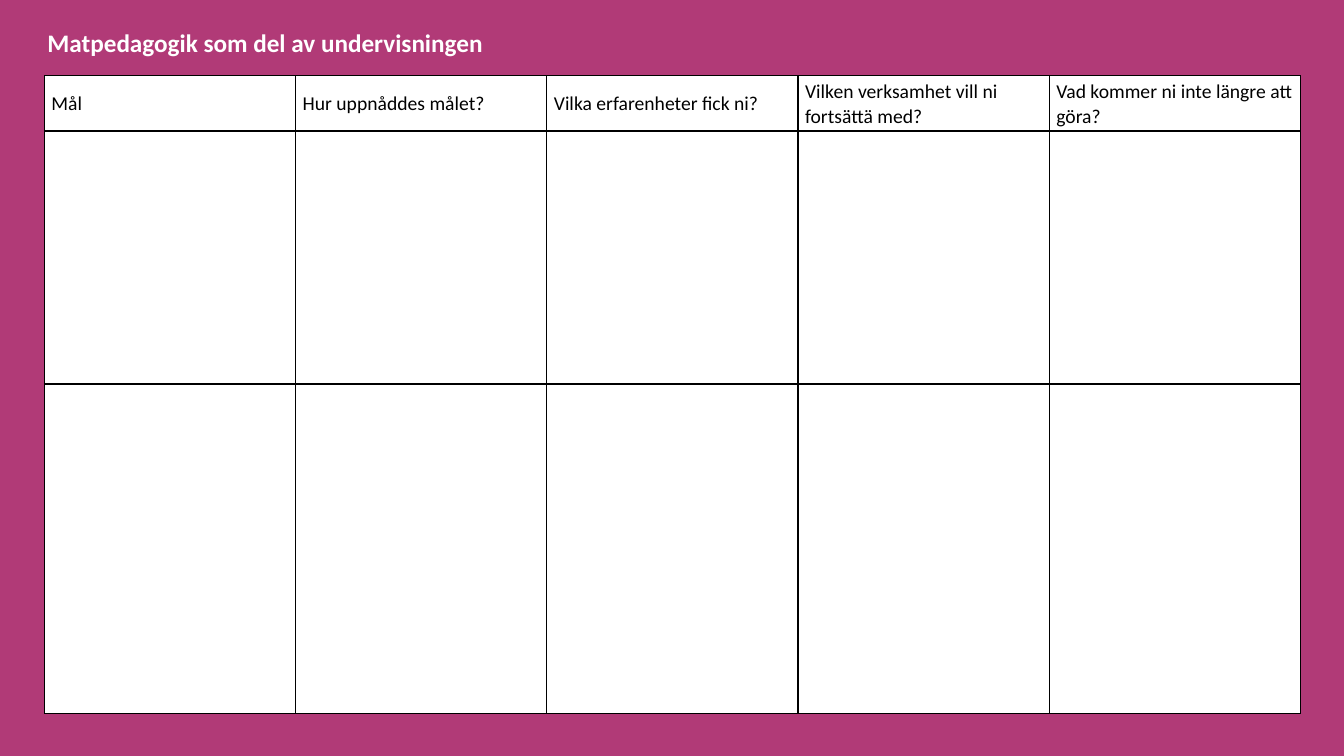
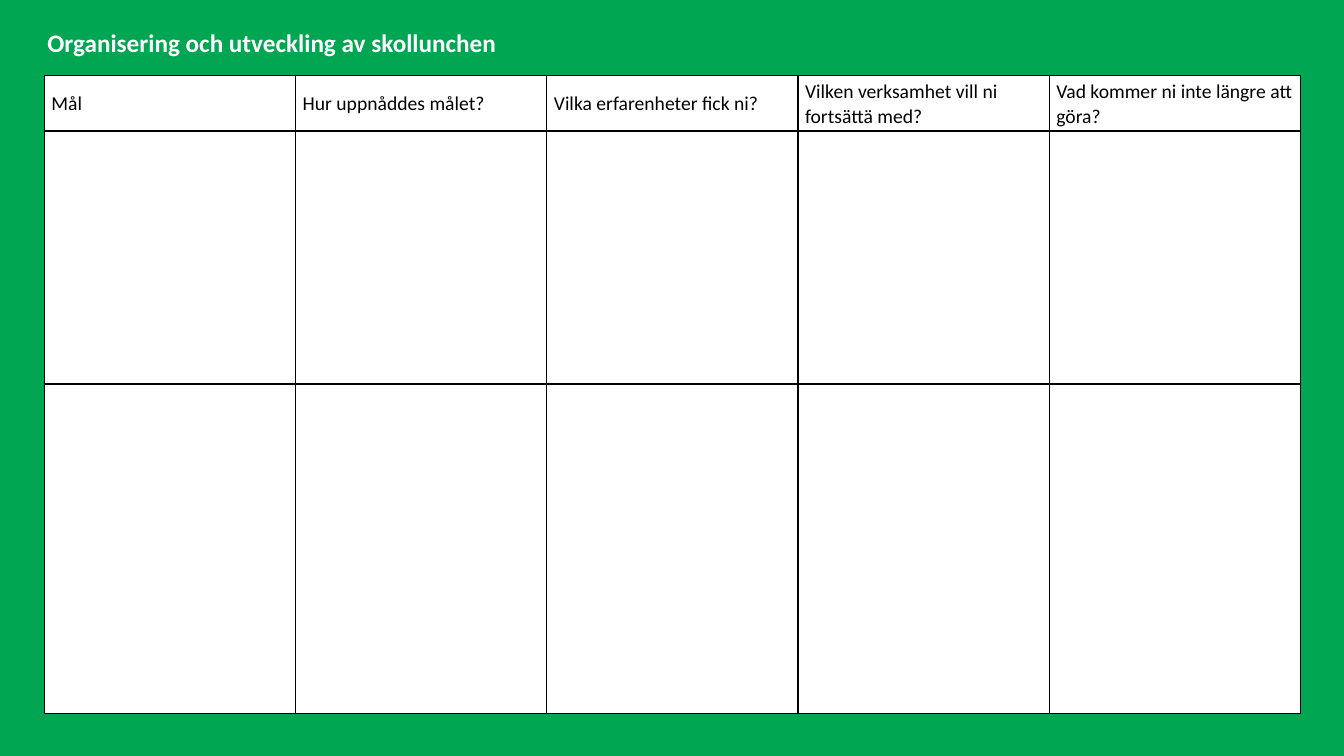
from dataclasses import dataclass

from lxml import etree
from pptx import Presentation
from pptx.dml.color import RGBColor
from pptx.enum.text import MSO_ANCHOR, MSO_AUTO_SIZE, PP_ALIGN
from pptx.oxml.ns import qn
from pptx.util import Inches, Pt

MIDDLE = MSO_ANCHOR.MIDDLE
LEFT = PP_ALIGN.LEFT
NO_FIT = MSO_AUTO_SIZE.NONE
TITLE_ONLY = 5

SLIDES = [
    ("Matpedagogik som del av undervisningen", "B13A77"),
    ("Organisering och utveckling av skollunchen", "00A651"),
]
HEADERS = [
    "Mål",
    "Hur uppnåddes målet?",
    "Vilka erfarenheter fick ni?",
    "Vilken verksamhet vill ni fortsättä med?",
    "Vad kommer ni inte längre att göra?",
]
ROW_HEIGHTS = [0.55, 2.51, 3.27]
TABLE_LEFT, TABLE_TOP, TABLE_WIDTH = 0.44, 0.75, 12.46
TITLE_BOX = (0.37, 0.22, 5.21, 0.4)


@dataclass(frozen=True)
class Theme:
    font: str = "Calibri"
    white: str = "FFFFFF"
    black: str = "000000"
    title_size: int = 18
    cell_size: int = 14
    border: int = 1


THEME = Theme()


def add_run(p, text, size, color, bold=False):
    r = p.add_run()
    r.text = text
    r.font.name = THEME.font
    r.font.size = Pt(size)
    r.font.bold = bold
    r.font.color.rgb = RGBColor.from_string(color)


def set_borders(cell):
    tc_pr = cell._tc.get_or_add_tcPr()
    for side in ("lnL", "lnR", "lnT", "lnB"):
        ln = etree.SubElement(tc_pr, qn(f"a:{side}"), w=str(Pt(THEME.border)))
        fill = etree.SubElement(ln, qn("a:solidFill"))
        etree.SubElement(fill, qn("a:srgbClr"), val=THEME.black)


def add_title(s, text):
    sp = s.shapes.title
    sp.left, sp.top, sp.width, sp.height = map(Inches, TITLE_BOX)
    tf = sp.text_frame
    tf.auto_size = NO_FIT
    tf.word_wrap = True
    tf.vertical_anchor = MIDDLE
    p = tf.paragraphs[0]
    p.alignment = LEFT
    add_run(p, text, THEME.title_size, THEME.white, bold=True)


def add_grid(s):
    frame = s.shapes.add_table(
        len(ROW_HEIGHTS), len(HEADERS), Inches(TABLE_LEFT), Inches(TABLE_TOP),
        Inches(TABLE_WIDTH), Inches(sum(ROW_HEIGHTS)))
    table = frame.table
    table.first_row = table.horz_banding = False
    for row, height in zip(table.rows, ROW_HEIGHTS):
        row.height = Inches(height)
    for cell in table.iter_cells():
        set_borders(cell)
        cell.fill.solid()
        cell.fill.fore_color.rgb = RGBColor.from_string(THEME.white)
        cell.vertical_anchor = MIDDLE
        cell.margin_left = cell.margin_right = Inches(0.07)
        cell.margin_top = cell.margin_bottom = 0
    for col, text in enumerate(HEADERS):
        p = table.cell(0, col).text_frame.paragraphs[0]
        p.line_spacing = 1.07
        p.space_after = Pt(8)
        add_run(p, text, THEME.cell_size, THEME.black)


def main():
    prs = Presentation()
    prs.slide_width, prs.slide_height = Inches(13.33), Inches(7.5)
    for title, color in SLIDES:
        s = prs.slides.add_slide(prs.slide_layouts[TITLE_ONLY])
        s.background.fill.solid()
        s.background.fill.fore_color.rgb = RGBColor.from_string(color)
        add_title(s, title)
        add_grid(s)
    prs.save("out.pptx")


if __name__ == "__main__":
    main()
